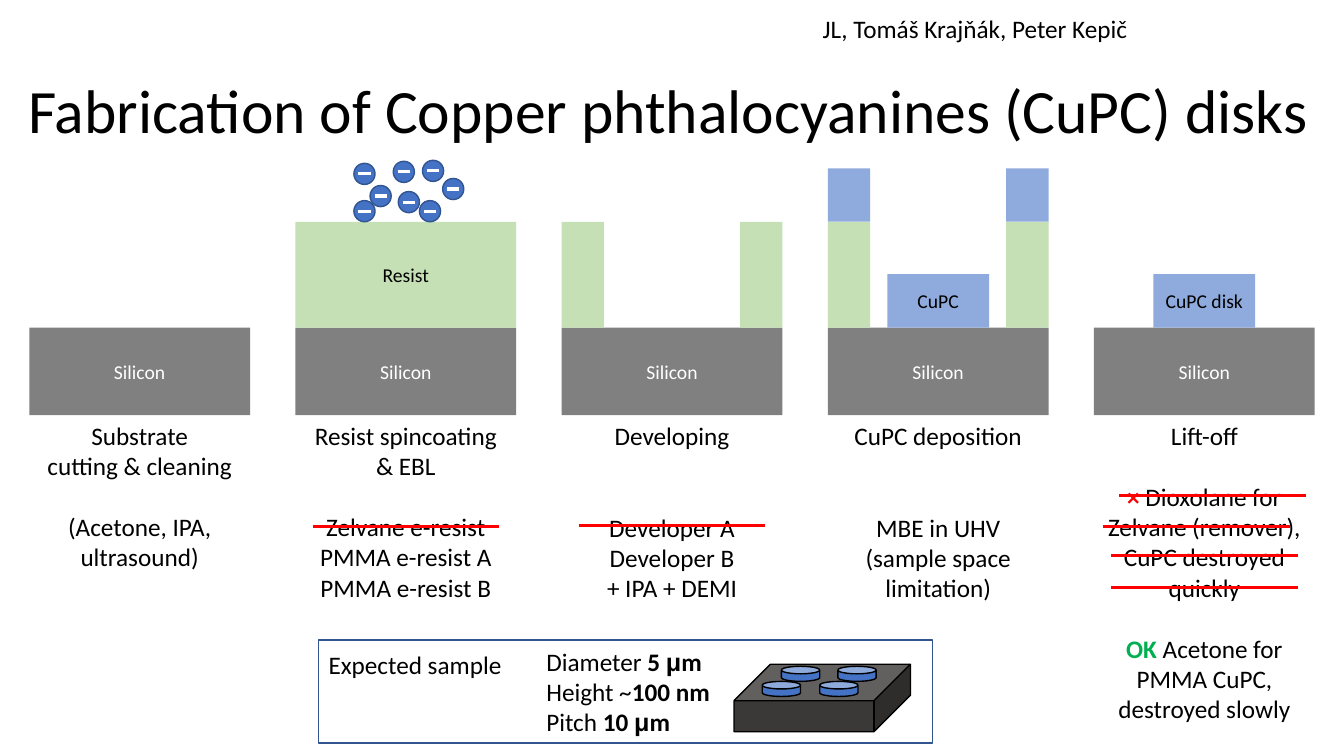
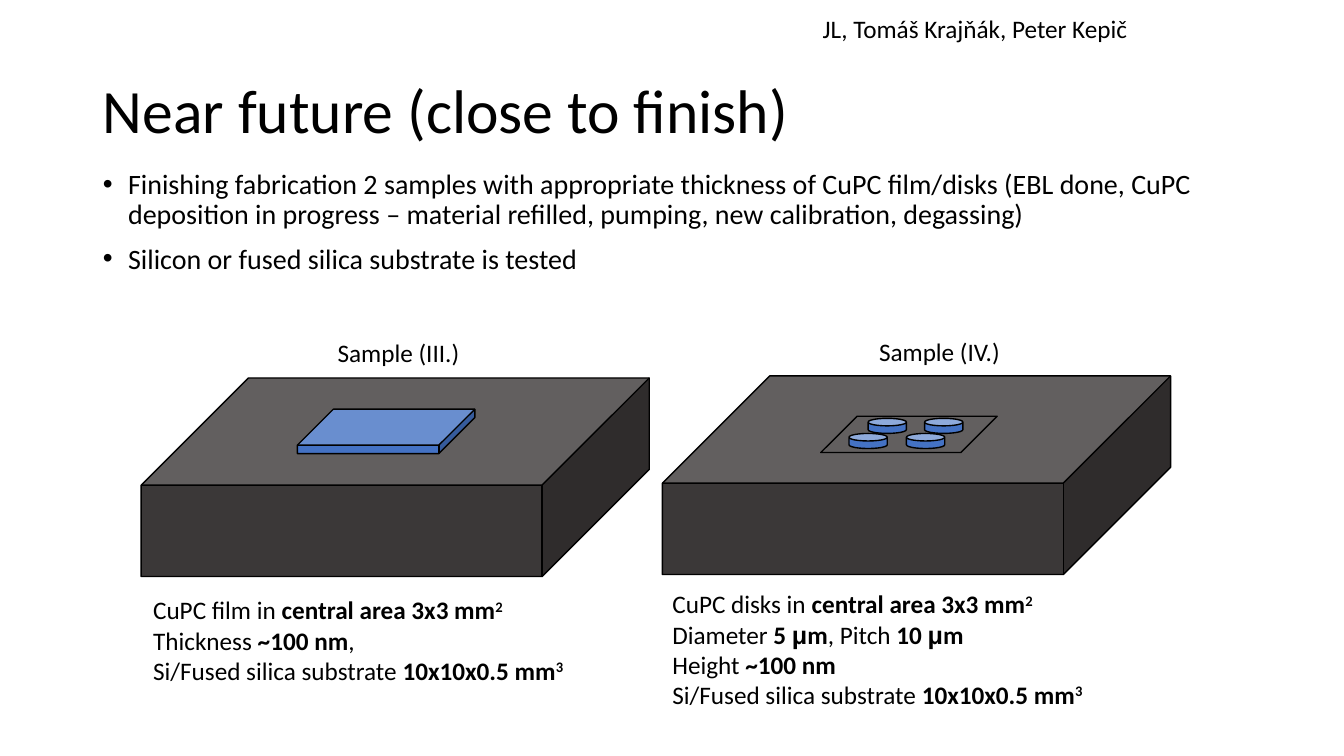
"""Build two slides on the fabrication of CuPC disks and the planned samples."""
from lxml import etree
from pptx import Presentation
from pptx import util as u
from pptx.dml.color import RGBColor
from pptx.enum import shapes, text
from pptx.oxml import ns

Inches = u.Inches
BLACK = RGBColor(0x00, 0x00, 0x00)
WHITE = RGBColor(0xFF, 0xFF, 0xFF)
RED = RGBColor(0xFF, 0x00, 0x00)
GREEN = RGBColor(0x00, 0xB0, 0x50)
SILICON = RGBColor(0x80, 0x80, 0x80)
RESIST = RGBColor(0xC5, 0xE0, 0xB4)
CUPC = RGBColor(0x8F, 0xAA, 0xDC)
DISK = RGBColor(0x44, 0x72, 0xC4)
OUTLINE = RGBColor(0x32, 0x54, 0x91)
SUBSTRATE = RGBColor(0x3B, 0x38, 0x38)

FONT = "Calibri"
LINE_PT = 22
SHAPE = shapes.MSO_SHAPE
CENTER, LEFT = text.PP_ALIGN.CENTER, text.PP_ALIGN.LEFT

STYLES = {
    "bold": {"bold": True},
    "greek": {"bold": True, "font": "Arial"},
    "power": {"bold": True, "baseline": "30000"},
    "bad": {"bold": True, "color": RED},
    "good": {"bold": True, "color": GREEN},
}

AUTHORS = "JL, Tomáš Krajňák, Peter Kepič"
FABRICATION_TITLE = "Fabrication of Copper phthalocyanines (CuPC) disks"
FUTURE_TITLE = "Near future (close to finish)"

STEP_LEFT, STEP_PITCH, STEP_WIDTH = 0.29, 2.64, 2.19
WALL_WIDTH = 0.42
WALL_OFFSETS = (0, STEP_WIDTH - WALL_WIDTH)
BASE = (SILICON, 0, 3.25, STEP_WIDTH, 0.87, "Silicon")
RESIST_WALLS = [(RESIST, x, 2.2, WALL_WIDTH, 1.05, "") for x in WALL_OFFSETS]
CUPC_CAPS = [(CUPC, x, 1.67, WALL_WIDTH, 0.53, "") for x in WALL_OFFSETS]

STEPS = [
    {"layers": [],
     "height": 1.62,
     "caption": [(0, "Substrate"), (0, "cutting & cleaning"),
                 (1, "(Acetone, IPA, ultrasound)")]},
    {"layers": [(RESIST, 0, 2.2, STEP_WIDTH, 1.05, "Resist")],
     "height": 1.92,
     "caption": [(0, "Resist spincoating & EBL"), (1, "Zelvane e-resist"),
                 (0, "PMMA e-resist A"), (0, "PMMA e-resist B")]},
    {"layers": RESIST_WALLS,
     "height": 1.92,
     "caption": [(0, "Developing"), (2, "Developer A"), (0, "Developer B"),
                 (0, "+ IPA + DEMI")]},
    {"layers": [(CUPC, 0.59, 2.72, 1.01, 0.53, "CuPC")] + RESIST_WALLS + CUPC_CAPS,
     "height": 1.92,
     "caption": [(0, "CuPC deposition"), (2, "MBE in UHV"),
                 (0, "(sample space limitation)")]},
    {"layers": [(CUPC, 0.59, 2.72, 1.01, 0.53, "CuPC disk")],
     "height": 3.13,
     "caption": [(0, "Lift-off"),
                 (1, [("×", "bad"), " Dioxolane for Zelvane (remover),"]),
                 (0, "CuPC destroyed quickly"),
                 (1, [("OK", "good"), " Acetone for PMMA CuPC, destroyed slowly"])]},
]

STRIKE_LENGTH = 1.85
STRIKES = [(3.1, 5.22), (5.74, 5.21), (11.1, 4.92), (10.94, 5.22),
           (11.02, 5.51), (11.02, 5.83)]

ELECTRON_SIZE, MINUS_LENGTH = 0.21, 0.12
ELECTRONS = [(3.51, 1.62), (3.67, 1.84), (3.9, 1.6), (3.51, 1.99),
             (4.16, 1.99), (3.95, 1.9), (4.39, 1.77), (4.19, 1.59)]

DISK_OFFSETS = [(0, 0.15), (0.57, 0.15), (0.19, 0), (0.75, 0)]

FIVE_MICRONS = [("5 ", "bold"), ("μ", "greek"), ("m", "bold")]
TEN_MICRONS = [("10 ", "bold"), ("μ", "greek"), ("m", "bold")]
THICKNESS = ("~100 nm", "bold")
CENTRAL_AREA = [("central area 3x3 mm", "bold"), ("2", "power")]
SUBSTRATE_SIZE = ["Si/Fused silica substrate ", ("10x10x0.5 mm", "bold"), ("3", "power")]

EXPECTED = [(0, ["Diameter "] + FIVE_MICRONS),
            (0, ["Height ~", ("100 nm", "bold")]),
            (0, ["Pitch "] + TEN_MICRONS)]
FILM_SAMPLE = [(0, ["CuPC film in "] + CENTRAL_AREA),
               (0, ["Thickness ", THICKNESS, ","]),
               (0, SUBSTRATE_SIZE)]
DISK_SAMPLE = [(0, ["CuPC disks in "] + CENTRAL_AREA),
               (0, ["Diameter "] + FIVE_MICRONS + [", Pitch "] + TEN_MICRONS),
               (0, ["Height ", THICKNESS]),
               (0, SUBSTRATE_SIZE)]

PLANS = [
    "Finishing fabrication 2 samples with appropriate thickness of CuPC film/disks "
    "(EBL done, CuPC deposition in progress – material refilled, pumping, "
    "new calibration, degassing)",
    "Silicon or fused silica substrate is tested",
]


def place(part, left, top, width, height):
    part.left, part.top = Inches(left), Inches(top)
    part.width, part.height = Inches(width), Inches(height)


def format_font(font, size, color=BLACK, name=FONT, bold=False):
    font.size, font.name, font.bold = u.Pt(size), name, bold
    font.color.rgb = color


def add_text(slide, box, paragraphs, align=LEFT):
    frame = slide.shapes.add_textbox(*map(Inches, box)).text_frame
    frame.word_wrap = True
    for index, (blank_lines, pieces) in enumerate(paragraphs):
        paragraph = frame.add_paragraph() if index else frame.paragraphs[0]
        paragraph.alignment = align
        if blank_lines:
            paragraph.space_before = u.Pt(LINE_PT * blank_lines)
        for piece in [pieces] if isinstance(pieces, str) else pieces:
            wording, style_name = (piece, None) if isinstance(piece, str) else piece
            style = STYLES.get(style_name, {})
            run = paragraph.add_run()
            run.text = wording
            format_font(run.font, 18, style.get("color", BLACK),
                        style.get("font", FONT), style.get("bold", False))
            if "baseline" in style:
                run._r.get_or_add_rPr().set("baseline", style["baseline"])


def add_part(slide, kind, box, fill=None, line=None, adjust=None, label="", ink=BLACK):
    part = slide.shapes.add_shape(kind, *map(Inches, box))
    part.shadow.inherit = False
    if fill is None:
        part.fill.background()
    else:
        part.fill.solid()
        part.fill.fore_color.rgb = fill
    if line is None:
        part.line.fill.background()
    else:
        part.line.color.rgb, part.line.width = line, u.Pt(1)
    if adjust is not None:
        part.adjustments[0] = adjust
    if label:
        part.text_frame.text = label
        paragraph = part.text_frame.paragraphs[0]
        paragraph.alignment = CENTER
        format_font(paragraph.runs[0].font, 14, ink)


def add_rule(slide, left, top, length, color):
    rule = slide.shapes.add_connector(shapes.MSO_CONNECTOR.STRAIGHT, Inches(left),
                                      Inches(top), Inches(left + length), Inches(top))
    rule.line.color.rgb, rule.line.width = color, u.Pt(2.25)
    etree.SubElement(rule._element.spPr, ns.qn("a:effectLst"))


def add_substrate(slide, box):
    add_part(slide, SHAPE.CUBE, box, SUBSTRATE, BLACK, 0.54)


def add_disks(slide, left, top):
    for dx, dy in DISK_OFFSETS:
        add_part(slide, SHAPE.CAN, (left + dx, top + dy, 0.38, 0.15), DISK, BLACK, 0.5)


def start_slide(deck, layout, heading, left, width):
    slide = deck.slides.add_slide(deck.slide_layouts[layout])
    title = slide.shapes.title
    place(title, left, 0.4, width, 1.45)
    frame = title.text_frame
    frame.text = heading
    frame.auto_size = text.MSO_AUTO_SIZE.NONE
    frame.vertical_anchor = text.MSO_ANCHOR.MIDDLE
    paragraph = frame.paragraphs[0]
    paragraph.alignment, paragraph.line_spacing = LEFT, 0.9
    format_font(paragraph.runs[0].font, 44)
    add_text(slide, (7.9, 0.08, 3.54, 0.4), [(0, AUTHORS)], CENTER)
    return slide


def build_fabrication(deck):
    slide = start_slide(deck, 5, FABRICATION_TITLE, 0.18, 12.96)
    for index, step in enumerate(STEPS):
        left = STEP_LEFT + index * STEP_PITCH
        for fill, dx, top, width, height, label in [BASE] + step["layers"]:
            add_part(slide, SHAPE.RECTANGLE, (left + dx, top, width, height), fill,
                     label=label, ink=WHITE if fill == SILICON else BLACK)
        add_text(slide, (left, 4.12, STEP_WIDTH, step["height"]), step["caption"], CENTER)

    add_substrate(slide, (7.28, 6.59, 1.75, 0.67))
    add_disks(slide, 7.56, 6.61)
    add_text(slide, (5.32, 6.36, 1.95, 1.01), EXPECTED)
    add_text(slide, (3.16, 6.39, 1.95, 0.4), [(0, "Expected sample")])
    add_part(slide, SHAPE.RECTANGLE, (3.16, 6.35, 6.09, 1.02), line=OUTLINE)

    for left, top in ELECTRONS:
        add_part(slide, SHAPE.OVAL, (left, top, ELECTRON_SIZE, ELECTRON_SIZE), DISK, OUTLINE)
        add_rule(slide, left + (ELECTRON_SIZE - MINUS_LENGTH) / 2,
                 top + ELECTRON_SIZE / 2, MINUS_LENGTH, WHITE)
    for left, top in STRIKES:
        add_rule(slide, left, top, STRIKE_LENGTH, RED)


def build_future(deck):
    slide = start_slide(deck, 1, FUTURE_TITLE, 0.92, 11.5)
    plans = slide.placeholders[1]
    place(plans, 0.92, 1.64, 11.89, 5.37)
    frame = plans.text_frame
    frame.text = "\n".join(PLANS)
    frame.auto_size = text.MSO_AUTO_SIZE.NONE
    for index, paragraph in enumerate(frame.paragraphs):
        paragraph.line_spacing = 0.9
        paragraph.space_before = u.Pt(10 if index else 0)
        properties = paragraph._p.get_or_add_pPr()
        properties.set("marL", str(Inches(0.25)))
        properties.set("indent", str(-Inches(0.25)))
        etree.SubElement(properties, ns.qn("a:buFont")).set("typeface", "Arial")
        etree.SubElement(properties, ns.qn("a:buChar")).set("char", "•")
        format_font(paragraph.runs[0].font, 20)

    add_substrate(slide, (6.57, 3.73, 5.04, 1.97))
    add_disks(slide, 8.42, 4.15)
    add_part(slide, SHAPE.PARALLELOGRAM, (8.14, 4.13, 1.75, 0.36), line=BLACK, adjust=1)
    add_substrate(slide, (1.4, 3.75, 5.04, 1.97))
    add_part(slide, SHAPE.CUBE, (2.95, 4.06, 1.76, 0.44), DISK, BLACK, 0.81)

    add_text(slide, (3.25, 3.3, 1.95, 0.4), [(0, "Sample (III.)")])
    add_text(slide, (8.62, 3.29, 1.44, 0.4), [(0, "Sample (IV.)")])
    add_text(slide, (1.42, 5.85, 4.31, 1.01), FILM_SAMPLE)
    add_text(slide, (6.57, 5.79, 4.31, 1.31), DISK_SAMPLE)


def main():
    deck = Presentation()
    deck.slide_width, deck.slide_height = Inches(13.33), Inches(7.5)
    build_fabrication(deck)
    build_future(deck)
    deck.save("out.pptx")


if __name__ == "__main__":
    main()
